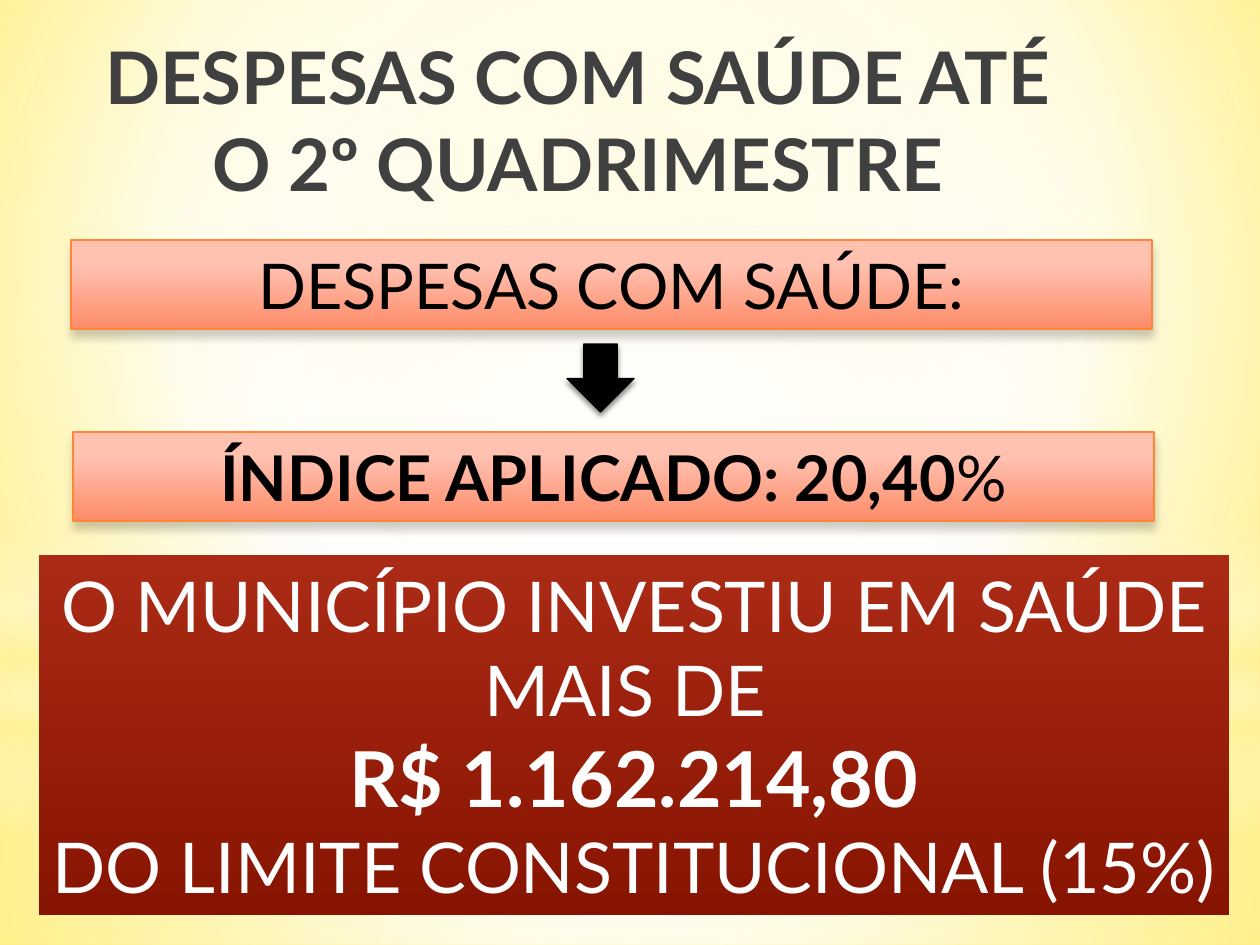
from lxml import etree
from pptx import Presentation
from pptx.dml.color import RGBColor
from pptx.enum.shapes import MSO_SHAPE
from pptx.enum.text import MSO_ANCHOR, MSO_AUTO_SIZE, PP_ALIGN
from pptx.oxml.ns import qn
from pptx.util import Pt

EMU_PER_PX = 914400 / 126
FONT = "Lato"
RECTANGLE, ELLIPSE, DOWN_ARROW = MSO_SHAPE.RECTANGLE, MSO_SHAPE.OVAL, MSO_SHAPE.DOWN_ARROW
TOP, MIDDLE = MSO_ANCHOR.TOP, MSO_ANCHOR.MIDDLE
CENTER, NO_AUTOFIT = PP_ALIGN.CENTER, MSO_AUTO_SIZE.NONE
TITLE_ONLY = 5

BLACK = RGBColor(0x00, 0x00, 0x00)
WHITE = RGBColor(0xFF, 0xFF, 0xFF)
CHARCOAL = RGBColor(0x40, 0x40, 0x40)
CREAM = RGBColor(0xFF, 0xF3, 0x9D)
LEMON = RGBColor(0xFF, 0xF1, 0x8D)
YELLOW = RGBColor(0xFF, 0xE9, 0x4E)
ORANGE = RGBColor(0xFE, 0x86, 0x37)
PINK = RGBColor(0xFF, 0xC1, 0xB0)
SALMON = RGBColor(0xFE, 0x8C, 0x69)
RED = RGBColor(0xAA, 0x2A, 0x15)
DARK_RED = RGBColor(0x87, 0x14, 0x02)

# Gradient stops: position %, colour, opacity %
BACKGROUND_STOPS = [(0, LEMON, 100), (60, WHITE, 100), (100, YELLOW, 100)]
BACKGROUND_FOCUS = (20, 10, 20, 60)
CENTRE_FOCUS = (50, 50, 50, 50)
BANNER_STOPS = [(28, PINK, 100), (100, SALMON, 100)]
SUMMARY_STOPS = [(0, RED, 100), (100, DARK_RED, 100)]
GLOWS = [
    (RECTANGLE, (0, 703, 1260, 242),
     [(0, WHITE, 91), (37, WHITE, 76), (100, CREAM, 79)], CENTRE_FOCUS),
    (RECTANGLE, (0, 0, 1260, 703),
     [(0, WHITE, 89), (48, WHITE, 62), (100, CREAM, 79)], CENTRE_FOCUS),
    (RECTANGLE, (0, 519, 1260, 315),
     [(0, WHITE, 0), (29, WHITE, 30), (45, CREAM, 40), (55, WHITE, 26),
      (65, CREAM, 60), (100, WHITE, 0)], None),
    (ELLIPSE, (0, 221, 1260, 703), [(0, WHITE, 100), (56, WHITE, 0)], CENTRE_FOCUS),
]

# Paragraphs are lists of runs: text, size in points, bold
TITLE_BOX = (63, 26, 1029, 87)
TITLE = [[("DESPESAS COM SAÚDE ATÉ O 2º QUADRIMESTRE", 41.4, True)]]
BANNERS = [
    ((71, 240, 1081, 89), [[("DESPESAS COM SAÚDE:", 36, False)]]),
    ((73, 432, 1081, 89), [[("ÍNDICE APLICADO: 20,40", 36, True), ("%", 36, False)]]),
]
ARROW_BOX = (567, 344, 67, 68)
SUMMARY_BOX = (39, 555, 1190, 360)
SUMMARY = [
    [("O MUNICÍPIO INVESTIU EM SAÚDE MAIS DE ", 40, False)],
    [("R$ 1.162.214,80", 44, True)],
    [("DO LIMITE CONSTITUCIONAL (15%)", 40, False)],
]


def emu(box):
    return [round(length * EMU_PER_PX) for length in box]


def add_element(parent, tag, **attributes):
    values = {name: str(value) for name, value in attributes.items()}
    return etree.SubElement(parent, qn(tag), values)


def add_color(parent, color, opacity):
    node = add_element(parent, "a:srgbClr", val=color)
    if opacity < 100:
        add_element(node, "a:alpha", val=opacity * 1000)


def set_gradient(fill, owner, stops, focus=None):
    """Fill owner's element top to bottom, or outwards from the focus insets (l, t, r, b)."""
    fill.gradient()
    gradient = next(owner.iter(qn("a:gradFill")))
    for child in list(gradient):
        gradient.remove(child)
    stop_list = add_element(gradient, "a:gsLst")
    for position, color, opacity in stops:
        add_color(add_element(stop_list, "a:gs", pos=position * 1000), color, opacity)
    if focus:
        circle = add_element(gradient, "a:path", path="circle")
        insets = {side: inset * 1000 for side, inset in zip("ltrb", focus)}
        add_element(circle, "a:fillToRect", **insets)
    else:
        add_element(gradient, "a:lin", ang=5400000, scaled=0)


def add_shadow(shape, opacity, blur, distance):
    effects = shape.element.spPr.find(qn("a:effectLst"))
    shadow = add_element(effects, "a:outerShdw", blurRad=Pt(blur), dist=Pt(distance),
                         dir=5400000, rotWithShape=0)
    add_color(shadow, BLACK, opacity)


def add_plain_shape(slide, kind, box, line=None):
    shape = slide.shapes.add_shape(kind, *emu(box))
    shape.shadow.inherit = False
    if line is None:
        shape.line.fill.background()
    else:
        shape.line.color.rgb = line
        shape.line.width = Pt(0.75)
    return shape


def write_text(shape, paragraphs, color=BLACK, anchor=MIDDLE):
    frame = shape.text_frame
    frame.word_wrap = True
    frame.auto_size = NO_AUTOFIT
    frame.vertical_anchor = anchor
    for index, runs in enumerate(paragraphs):
        paragraph = frame.add_paragraph() if index else frame.paragraphs[0]
        paragraph.alignment = CENTER
        for text, size, bold in runs:
            run = paragraph.add_run()
            run.text = text
            run.font.name = FONT
            run.font.size = Pt(size)
            run.font.bold = bold
            run.font.color.rgb = color


def main():
    presentation = Presentation()
    presentation.slide_width, presentation.slide_height = emu((1260, 945))
    slide = presentation.slides.add_slide(presentation.slide_layouts[TITLE_ONLY])
    set_gradient(slide.background.fill, slide.element, BACKGROUND_STOPS, BACKGROUND_FOCUS)

    for kind, box, stops, focus in GLOWS:
        glow = add_plain_shape(slide, kind, box)
        set_gradient(glow.fill, glow.element, stops, focus)

    title = slide.shapes.title
    title.left, title.top, title.width, title.height = emu(TITLE_BOX)
    write_text(title, TITLE, color=CHARCOAL, anchor=TOP)
    slide.shapes.element.append(title.element)  # in front of the glows

    for box, paragraphs in BANNERS:
        banner = add_plain_shape(slide, RECTANGLE, box, line=ORANGE)
        set_gradient(banner.fill, banner.element, BANNER_STOPS)
        add_shadow(banner, opacity=20, blur=5, distance=4)
        write_text(banner, paragraphs)

    arrow = add_plain_shape(slide, DOWN_ARROW, ARROW_BOX, line=BLACK)
    arrow.fill.solid()
    arrow.fill.fore_color.rgb = BLACK
    add_shadow(arrow, opacity=45, blur=3.1, distance=1.8)

    summary = add_plain_shape(slide, RECTANGLE, SUMMARY_BOX)
    set_gradient(summary.fill, summary.element, SUMMARY_STOPS)
    write_text(summary, SUMMARY, color=WHITE)

    presentation.save("out.pptx")


if __name__ == "__main__":
    main()
